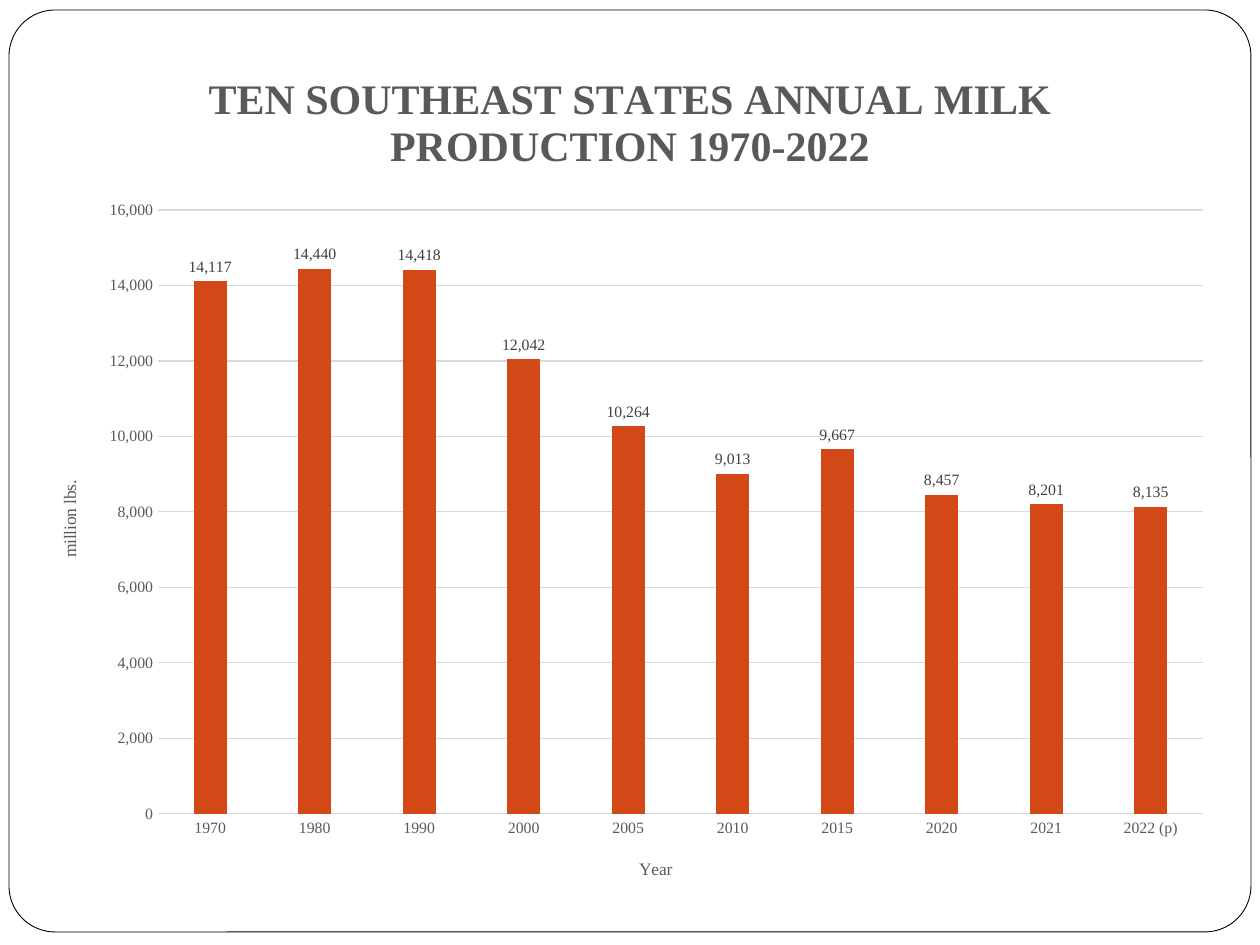
import dataclasses

import lxml.etree
import pptx
import pptx.chart.data
import pptx.dml.color
import pptx.enum.chart
import pptx.enum.shapes
import pptx.oxml.ns
import pptx.util


@dataclasses.dataclass(frozen=True)
class Theme:
    """Colours, font and type sizes of the slide."""
    font: str = "Times New Roman"
    bar: str = "D34817"
    text: str = "595959"
    label: str = "404040"
    grid: str = "D9D9D9"
    paper: str = "FFFFFF"
    frame: str = "000000"
    title_size: int = 24
    axis_size: int = 10
    tick_size: int = 9


THEME = Theme()
EMU_PER_PX = 914400 / 126
MILK = {
    "1970": 14117, "1980": 14440, "1990": 14418, "2000": 12042, "2005": 10264,
    "2010": 9013, "2015": 9667, "2020": 8457, "2021": 8201, "2022 (p)": 8135,
}


def px(n):
    """Turn pixels into EMU."""
    return pptx.util.Emu(round(n * EMU_PER_PX))


def rgb(value):
    """Turn a hex string into a colour."""
    return pptx.dml.color.RGBColor.from_string(value)


def set_font(font, size, color=THEME.text, bold=False):
    """Format a font."""
    font.name, font.size, font.bold = THEME.font, pptx.util.Pt(size), bold
    font.color.rgb = rgb(color)


def set_line(line, color, width):
    """Format a line."""
    line.color.rgb = rgb(color)
    line.width = pptx.util.Pt(width)


def place(element, index, inner=False, **fractions):
    """Give a chart part a manual layout in fractions of the chart."""
    qn = pptx.oxml.ns.qn
    for old in element.findall(qn("c:layout")):
        element.remove(old)
    layout = lxml.etree.Element(qn("c:layout"))
    manual = lxml.etree.SubElement(layout, qn("c:manualLayout"))
    values = {"layoutTarget": "inner"} if inner else {}
    values.update(xMode="edge", yMode="edge", **fractions)
    for name, value in values.items():
        lxml.etree.SubElement(manual, qn(f"c:{name}")).set("val", str(value))
    element.insert(index, layout)


def add_title(owner, text, x, y, size=THEME.axis_size, bold=False, rotation=0):
    """Write the title of a chart or an axis at a place in the chart."""
    title = owner.chart_title if hasattr(owner, "chart_title") else owner.axis_title
    tf = title.text_frame
    tf.text = text
    p = tf.paragraphs[0]
    set_font(p.font, size, bold=bold)
    set_font(p.runs[0].font, size, bold=bold)
    body = title._element.find(".//" + pptx.oxml.ns.qn("a:bodyPr"))
    body.set("rot", str(rotation * 60000))
    body.set("vert", "horz")
    place(title._element, 1, x=x, y=y)


def add_frame(s, x, y, w, h):
    """Draw the rounded frame of the slide."""
    sp = s.shapes.add_shape(pptx.enum.shapes.MSO_SHAPE.ROUNDED_RECTANGLE,
                            px(x), px(y), px(w), px(h))
    sp.adjustments[0] = 0.05
    sp.shadow.inherit = False
    sp.fill.solid()
    sp.fill.fore_color.rgb = rgb(THEME.paper)
    set_line(sp.line, THEME.frame, 0.5)


def style_axes(chart):
    """Format both axes and the grid."""
    for axis in (chart.category_axis, chart.value_axis):
        axis.major_tick_mark = pptx.enum.chart.XL_TICK_MARK.NONE
        axis.minor_tick_mark = pptx.enum.chart.XL_TICK_MARK.NONE
        set_font(axis.tick_labels.font, THEME.tick_size)
    set_line(chart.category_axis.format.line, THEME.grid, 0.75)
    axis = chart.value_axis
    axis.minimum_scale, axis.maximum_scale, axis.major_unit = 0, 16000, 2000
    axis.tick_labels.number_format = "#,##0"
    axis.tick_labels.number_format_is_linked = False
    axis.format.line.fill.background()
    set_line(axis.major_gridlines.format.line, THEME.grid, 0.75)


def style_bars(plot):
    """Format the bars and their value labels."""
    plot.gap_width, plot.overlap, plot.vary_by_categories = 219, -27, False
    fill = plot.series[0].format.fill
    fill.solid()
    fill.fore_color.rgb = rgb(THEME.bar)
    labels = plot.series[0].data_labels
    labels.show_value = True
    labels.number_format, labels.number_format_is_linked = "#,##0", False
    labels.position = pptx.enum.chart.XL_LABEL_POSITION.OUTSIDE_END
    set_font(labels.font, THEME.tick_size, THEME.label)


def add_milk_chart(s, x, y, w, h):
    """Add the milk production chart with its titles."""
    data = pptx.chart.data.CategoryChartData(number_format="#,##0")
    data.categories = list(MILK)
    data.add_series("", list(MILK.values()))
    chart = s.shapes.add_chart(pptx.enum.chart.XL_CHART_TYPE.COLUMN_CLUSTERED,
                               px(x), px(y), px(w), px(h), data).chart
    set_font(chart.font, THEME.axis_size, THEME.frame)
    chart.has_legend = False
    style_axes(chart)
    style_bars(chart.plots[0])
    add_title(chart, "TEN SOUTHEAST STATES ANNUAL MILK PRODUCTION 1970-2022",
              167 / w, 25 / h, size=THEME.title_size, bold=True)
    add_title(chart.category_axis, "Year", 602 / w, 816 / h)
    add_title(chart.value_axis, "million lbs.", 21 / w, 438 / h, rotation=-90)
    plot_area = chart._chartSpace.chart.plotArea
    place(plot_area, 0, inner=True, x=124 / w, y=171 / h, w=1045 / w, h=604 / h)


def main():
    """Build the slide and save it."""
    prs = pptx.Presentation()
    prs.slide_width, prs.slide_height = px(1260), px(945)
    s = prs.slides.add_slide(prs.slide_layouts[6])
    add_frame(s, 9, 10, 1242, 922)
    add_milk_chart(s, 34, 39, 1193, 866)
    prs.save("out.pptx")


if __name__ == "__main__":
    main()
